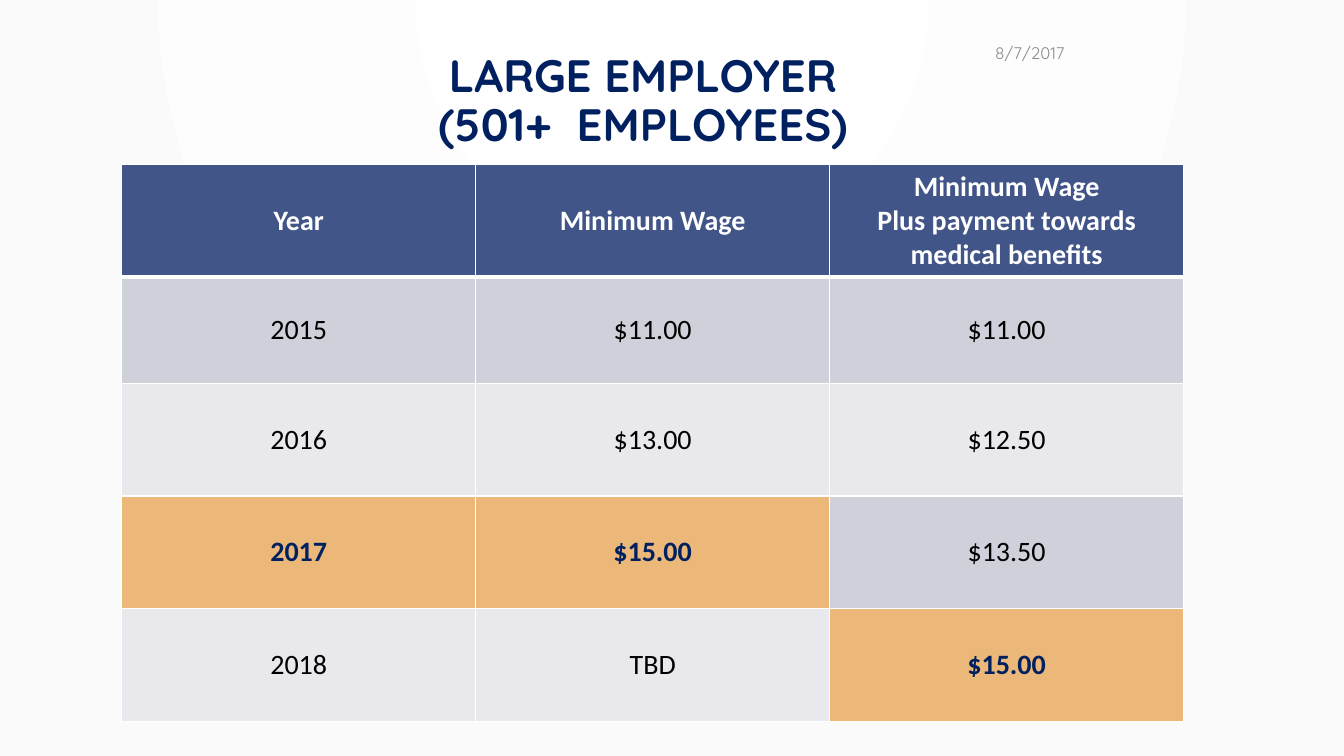
from dataclasses import dataclass

from lxml import etree
from pptx import Presentation
from pptx.dml.color import RGBColor
from pptx.enum import text as t
from pptx.oxml import ns
from pptx.util import Cm, Pt


@dataclass(frozen=True)
class Theme:
    """Hold the colours, fonts and type sizes of the slide."""
    navy: str = "002060"
    head: str = "415588"
    dark: str = "CFD1DA"
    light: str = "E9E9ED"
    mark: str = "ECB87A"
    white: str = "FFFFFF"
    black: str = "000000"
    grey: str = "8C8C8C"
    edge: str = "FAFAFA"
    show: str = "Quicksand"
    body: str = "Calibri"
    title: float = 32.4
    cell: float = 20
    date: float = 12


LOOK = Theme()
ROWS = [
    ("Year", "Minimum Wage", "Minimum Wage\nPlus payment towards medical benefits"),
    ("2015", "$11.00", "$11.00"),
    ("2016", "$13.00", "$12.50"),
    ("2017", "$15.00", "$13.50"),
    ("2018", "TBD", "$15.00"),
]
HIGH = [2.82, 2.67, 2.84, 2.84, 2.84]
MARKS = {(3, 0), (3, 1), (4, 2)}


def write(frame, words, size, color, font=LOOK.body, bold=False,
          align=t.PP_ALIGN.CENTER, space=None):
    """Fill a text frame with formatted words."""
    frame.text = words
    frame.word_wrap = True
    for para in frame.paragraphs:
        para.alignment = align
        if space:
            para.line_spacing = space
        for run in para.runs:
            run.font.name = font
            run.font.size = Pt(size)
            run.font.bold = bold
            run.font.color.rgb = RGBColor.from_string(color)


def place(shape, left, top, width, height):
    """Set the position and size of a shape in centimetres."""
    shape.left, shape.top = Cm(left), Cm(top)
    shape.width, shape.height = Cm(width), Cm(height)


def glow(slide):
    """Give the slide a round gradient that spreads from the bottom or top edge."""
    fill = slide.background.fill
    fill.gradient()
    for stop, color in zip(fill.gradient_stops, (LOOK.white, LOOK.edge)):
        stop.color.rgb = RGBColor.from_string(color)
    grad = next(slide.element.iter(ns.qn("a:gradFill")))
    grad.remove(grad.find(ns.qn("a:lin")))
    ring = etree.SubElement(grad, ns.qn("a:path"), path="circle")
    etree.SubElement(ring, ns.qn("a:fillToRect"),
                     l="43000", t="0", r="43000", b="100000")


def border(cell, side, width):
    """Draw a white line on one side of a cell."""
    props = cell._tc.get_or_add_tcPr()
    line = etree.SubElement(props, ns.qn("a:ln" + side), w=str(Pt(width)))
    solid = etree.SubElement(line, ns.qn("a:solidFill"))
    etree.SubElement(solid, ns.qn("a:srgbClr"), val=LOOK.white)


def paint(cell, row, col):
    """Set the borders, fill and words of a cell."""
    for side in "LRTB":
        thick = (row, side) in ((0, "B"), (1, "T"))
        border(cell, side, 3 if thick else 1)
    if row == 0:
        fill, color = LOOK.head, LOOK.white
    elif (row, col) in MARKS:
        fill, color = LOOK.mark, LOOK.navy
    else:
        fill, color = (LOOK.dark if row % 2 else LOOK.light), LOOK.black
    cell.fill.solid()
    cell.fill.fore_color.rgb = RGBColor.from_string(fill)
    cell.vertical_anchor = t.MSO_ANCHOR.MIDDLE
    write(cell.text_frame, ROWS[row][col], LOOK.cell, color,
          bold=color != LOOK.black)


def grid(slide):
    """Add the wage table."""
    wide = 8.92
    table = slide.shapes.add_table(len(ROWS), 3, Cm(3.07), Cm(4.14),
                                   Cm(3 * wide), Cm(sum(HIGH))).table
    for col in table.columns:
        col.width = Cm(wide)
    for row, high in enumerate(HIGH):
        table.rows[row].height = Cm(high)
        for col in range(3):
            paint(table.cell(row, col), row, col)


def head(slide):
    """Place and format the title."""
    title = slide.shapes.title
    place(title, 2.87, 1.22, 26.67, 2.31)
    frame = title.text_frame
    frame.auto_size = t.MSO_AUTO_SIZE.NONE
    frame.vertical_anchor = t.MSO_ANCHOR.TOP
    write(frame, "LARGE EMPLOYER\v(501+  EMPLOYEES)", LOOK.title, LOOK.navy,
          font=LOOK.show, bold=True, space=0.9)


def date(slide):
    """Add the date at the top right."""
    box = slide.shapes.add_textbox(Cm(20.09), Cm(0.91), Cm(6.99), Cm(0.86))
    box.text_frame.vertical_anchor = t.MSO_ANCHOR.MIDDLE
    write(box.text_frame, "8/7/2017", LOOK.date, LOOK.grey,
          font=LOOK.show, align=t.PP_ALIGN.RIGHT)


def main():
    """Build and save the slide."""
    deck = Presentation()
    deck.slide_width, deck.slide_height = Cm(33.87), Cm(19.05)
    slide = deck.slides.add_slide(deck.slide_layouts[5])
    glow(slide)
    head(slide)
    grid(slide)
    date(slide)
    deck.save("out.pptx")


if __name__ == "__main__":
    main()
